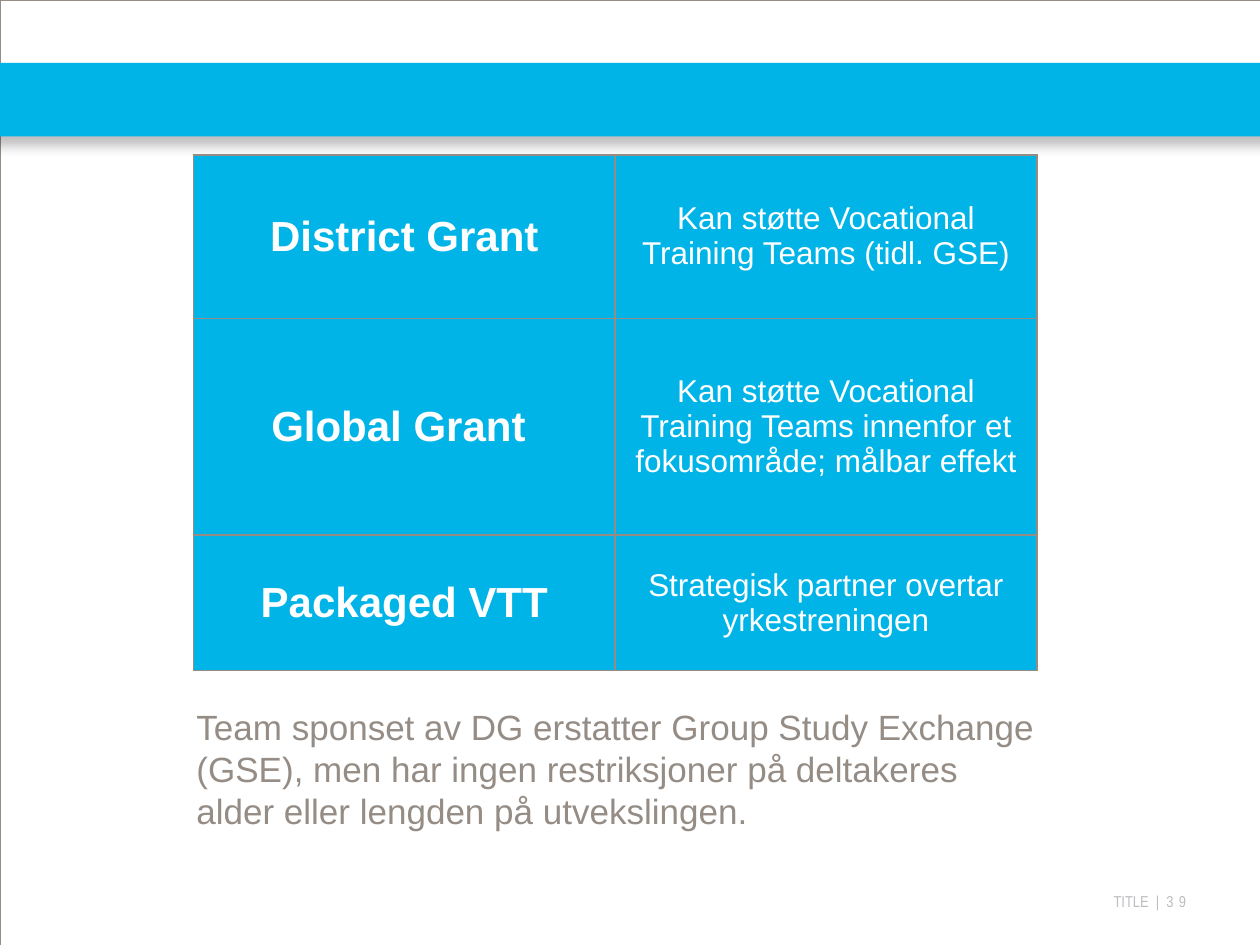
"""Build the slide on grants and vocational training teams."""
from lxml.etree import SubElement
from pptx import Presentation
from pptx.dml.color import RGBColor
from pptx.enum.shapes import MSO_SHAPE
from pptx.enum.text import MSO_ANCHOR, PP_ALIGN
from pptx.oxml import parse_xml
from pptx.oxml.ns import qn
from pptx.util import Cm, Pt

BLUE, GREY, PALE, WHITE = "01B4E7", "958D85", "BCBDC0", "FFFFFF"
NS = 'xmlns:a="http://schemas.openxmlformats.org/drawingml/2006/main"'


def color(code):
    return RGBColor.from_string(code)


def write(para, text, size, code, face="Arial", bold=False):
    run = para.add_run()
    run.text = text
    font = run.font
    font.name, font.size, font.bold = face, Pt(size), bold
    font.color.rgb = color(code)
    return run


deck = Presentation()
deck.slide_width, deck.slide_height = Cm(25.4), Cm(19.05)
slide = deck.slides.add_slide(deck.slide_layouts[6])
shapes = slide.shapes

foot = shapes.add_textbox(Cm(19.69), Cm(17.98), Cm(4.22), Cm(0.38)).text_frame
foot.margin_left = foot.margin_right = foot.margin_top = foot.margin_bottom = 0
foot.word_wrap = True
para = foot.paragraphs[0]
para.alignment = PP_ALIGN.RIGHT
write(para, "TITLE  |  ", 9, PALE, "Arial Narrow")
page = write(para, "39", 9, PALE, "Arial Narrow")
page.font._element.set("spc", "300")

frame = shapes.add_shape(MSO_SHAPE.RECTANGLE, 0, 0, Cm(25.4), Cm(19.05))
frame.shadow.inherit = False
frame.fill.background()
frame.line.color.rgb = color(GREY)
frame.line.width = Pt(0.13)

band = shapes.add_shape(MSO_SHAPE.RECTANGLE, Cm(-0.2), Cm(1.27), Cm(25.83), Cm(1.48))
band.fill.solid()
band.fill.fore_color.rgb = color(BLUE)
band.line.fill.background()
band.shadow.inherit = False
glow = band._element.spPr.find(qn("a:effectLst"))
glow.append(parse_xml(
    f'<a:outerShdw {NS} blurRad="88900" dist="60960" dir="5400000" algn="t" rotWithShape="0">'
    '<a:srgbClr val="000000"><a:alpha val="25000"/></a:srgbClr></a:outerShdw>'))

rows = [
    ("District Grant", "Kan støtte Vocational Training Teams (tidl. GSE)", 3.3),
    ("Global Grant ",
     "Kan støtte Vocational Training Teams innenfor et fokusområde; målbar effekt", 4.36),
    ("Packaged VTT", "Strategisk partner overtar yrkestreningen", 2.74),
]
grid = shapes.add_table(3, 2, Cm(3.9), Cm(3.12), Cm(17), Cm(10.4)).table
for col in grid.columns:
    col.width = Cm(8.5)
for r, (name, note, high) in enumerate(rows):
    grid.rows[r].height = Cm(high)
    for c, (text, size, bold, pitch) in enumerate([(name, 24, True, 27), (note, 18, False, 20)]):
        cell = grid.cell(r, c)
        cell.vertical_anchor = MSO_ANCHOR.MIDDLE
        para = cell.text_frame.paragraphs[0]
        para.alignment = PP_ALIGN.CENTER
        para.line_spacing = Pt(pitch)
        write(para, text, size, WHITE, bold=bold)
        props = cell._tc.get_or_add_tcPr()
        for side in ("lnL", "lnR", "lnT", "lnB"):
            edge = SubElement(props, qn(f"a:{side}"), w=str(Pt(1)))
            fill = SubElement(edge, qn("a:solidFill"))
            SubElement(fill, qn("a:srgbClr"), val=GREY)
        cell.fill.solid()
        cell.fill.fore_color.rgb = color(BLUE)

body = shapes.add_textbox(Cm(3.71), Cm(14.1), Cm(17.6), Cm(2.82)).text_frame
body.word_wrap = True
para = body.paragraphs[0]
para.line_spacing = Pt(24)
write(para, "Team sponset av DG erstatter Group Study Exchange (GSE), men har ingen "
      "restriksjoner på deltakeres alder eller lengden på utvekslingen.", 20, GREY)

deck.save("out.pptx")
